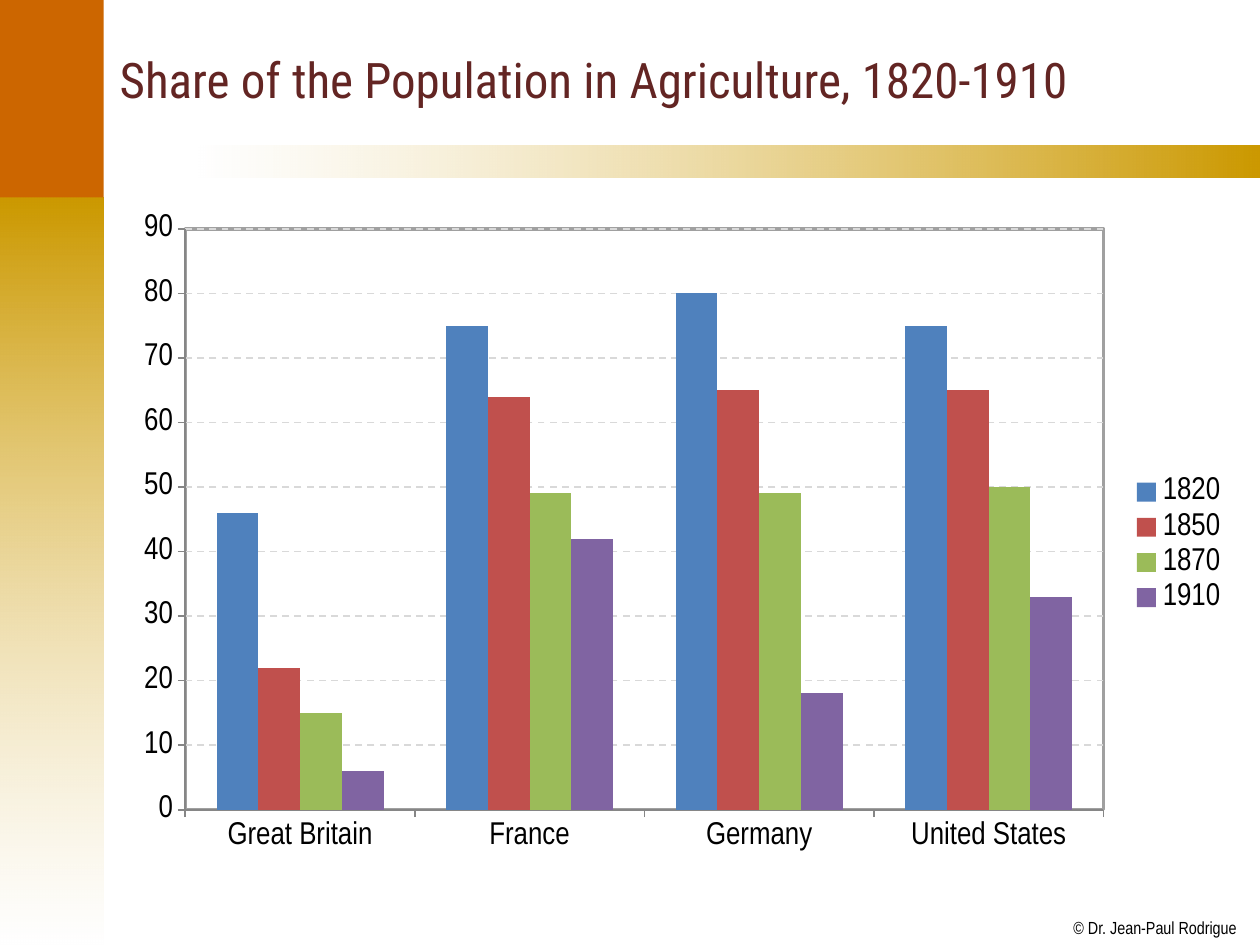
from dataclasses import dataclass

from lxml.etree import SubElement
from pptx import Presentation
from pptx.chart.data import CategoryChartData
from pptx.dml.color import RGBColor
from pptx.enum.chart import XL_CHART_TYPE as ChartType
from pptx.enum.chart import XL_LEGEND_POSITION as LegendPos
from pptx.enum.chart import XL_TICK_MARK as Tick
from pptx.enum.dml import MSO_LINE as Dash
from pptx.enum.shapes import MSO_SHAPE as Preset
from pptx.enum.text import MSO_ANCHOR as Anchor
from pptx.enum.text import PP_ALIGN as Align
from pptx.oxml import parse_xml
from pptx.oxml.ns import nsdecls, qn
from pptx.util import Cm, Pt


@dataclass(frozen=True)
class Theme:
    title_font: str = "Roboto Condensed"
    body_font: str = "Arial Narrow"
    title_size: int = 28
    chart_size: int = 18
    credit_size: int = 10
    title: str = "632523"
    text: str = "000000"
    orange: str = "CC6600"
    gold: str = "CC9900"
    white: str = "FFFFFF"
    grid: str = "D9D9D9"
    axis: str = "868686"
    frame: str = "A0A0A0"
    series: tuple = ("4F81BD", "C0504D", "9BBB59", "8064A2")


THEME = Theme()
rgb = RGBColor.from_string

COUNTRIES = ("Great Britain", "France", "Germany", "United States")
SHARES = {
    "1820": (46, 75, 80, 75),
    "1850": (22, 64, 65, 65),
    "1870": (15, 49, 49, 50),
    "1910": (6, 42, 18, 33),
}


def set_font(font, name, size, color):
    font.name, font.size, font.bold = name, Pt(size), False
    font.color.rgb = rgb(color)


def add_block(slide, box):
    block = slide.shapes.add_shape(Preset.RECTANGLE, *map(Cm, box))
    block.shadow.inherit = False
    block.line.fill.background()
    return block


def add_fade(slide, box, stops, angle):
    """Rectangle with a gradient of (colour, opacity in percent) stops."""
    block = add_block(slide, box)
    block.fill.gradient()
    block.fill.gradient_angle = angle
    for position, stop, (color, _) in zip((0, 1), block.fill.gradient_stops, stops):
        stop.position = position
        stop.color.rgb = rgb(color)
    colors = block._element.spPr.iter(qn("a:srgbClr"))
    for element, (_, opacity) in zip(colors, stops):
        if opacity < 100:
            SubElement(element, qn("a:alpha"), val=str(opacity * 1000))


def add_decoration(slide, box):
    """Side column with an orange head, and a gold band under the title."""
    left, top, width, height = box
    column, head, band_left, band_top, band_height = 2.11, 4.0, 4.0, 2.93, 0.66
    add_fade(slide, (left, top + head, column, height - head),
             ((THEME.gold, 100), (THEME.white, 51)), 270)
    add_fade(slide, (band_left, band_top, left + width - band_left, band_height),
             ((THEME.white, 50), (THEME.gold, 100)), 0)
    corner = add_block(slide, (left, top, column, head))
    corner.fill.solid()
    corner.fill.fore_color.rgb = rgb(THEME.orange)


def add_credit(slide, box):
    credit = slide.shapes.add_textbox(*map(Cm, box))
    frame = credit.text_frame
    frame.margin_left = frame.margin_right = frame.margin_top = frame.margin_bottom = 0
    frame.word_wrap = False
    line = frame.paragraphs[0]
    line.text = "© Dr. Jean-Paul Rodrigue"
    set_font(line.font, THEME.body_font, THEME.credit_size, THEME.text)


def place_title(slide, box):
    title = slide.shapes.title
    title.left, title.top, title.width, title.height = map(Cm, box)
    slide.shapes._spTree.append(title._element)  # in front of the decoration
    frame = title.text_frame
    frame.vertical_anchor = Anchor.MIDDLE
    line = frame.paragraphs[0]
    line.text = "Share of the Population in Agriculture, 1820-1910"
    line.alignment = Align.LEFT
    set_font(line.font, THEME.title_font, THEME.title_size, THEME.title)


def frame_plot(chart, x, y, w, h):
    """Fix the inner plot area, as fractions of the chart, and outline it."""
    plot_area = chart._chartSpace.chart.plotArea
    for layout in plot_area.findall(qn("c:layout")):
        plot_area.remove(layout)
    sizes = "".join(f'<c:{tag} val="{value}"/>' for tag, value in zip("xywh", (x, y, w, h)))
    plot_area.insert(0, parse_xml(
        f'<c:layout {nsdecls("c")}><c:manualLayout><c:layoutTarget val="inner"/>'
        f'<c:xMode val="edge"/><c:yMode val="edge"/>{sizes}'
        '</c:manualLayout></c:layout>'))
    plot_area.append(parse_xml(
        f'<c:spPr {nsdecls("c", "a")}><a:noFill/><a:ln w="25400"><a:solidFill>'
        f'<a:srgbClr val="{THEME.frame}"/></a:solidFill></a:ln></c:spPr>'))


def add_share_chart(slide, box):
    data = CategoryChartData()
    data.categories = COUNTRIES
    for year, shares in SHARES.items():
        data.add_series(year, shares)
    chart = slide.shapes.add_chart(
        ChartType.COLUMN_CLUSTERED, *map(Cm, box), data).chart
    set_font(chart.font, THEME.body_font, THEME.chart_size, THEME.text)
    chart.has_title = False

    # Columns
    columns = chart.plots[0]
    columns.gap_width, columns.overlap = 150, 0
    columns.vary_by_categories = False
    for year, color in zip(columns.series, THEME.series):
        year.format.fill.solid()
        year.format.fill.fore_color.rgb = rgb(color)

    # Axes and grid
    countries, percent = chart.category_axis, chart.value_axis
    for axis in (countries, percent):
        axis.major_tick_mark, axis.minor_tick_mark = Tick.OUTSIDE, Tick.NONE
        axis.format.line.color.rgb = rgb(THEME.axis)
        axis.format.line.width = Pt(1)
    percent.minimum_scale, percent.maximum_scale, percent.major_unit = 0, 90, 10
    percent.has_major_gridlines = True
    grid = percent.major_gridlines.format.line
    grid.color.rgb, grid.width, grid.dash_style = rgb(THEME.grid), Pt(1), Dash.DASH

    # Legend and plot frame
    chart.has_legend = True
    chart.legend.position = LegendPos.RIGHT
    chart.legend.include_in_layout = False
    frame_plot(chart, 0.071, 0.067, 0.808, 0.796)


def main():
    deck = Presentation()
    deck.slide_width, deck.slide_height = Cm(25.4), Cm(19.05)
    slide = deck.slides.add_slide(deck.slide_layouts[5])  # Title Only
    add_decoration(slide, (-0.02, -0.02, 25.42, 19.07))
    add_credit(slide, (21.64, 18.49, 3.3, 0.43))
    place_title(slide, (2.16, 0.28, 22.81, 2.64))
    add_share_chart(slide, (2.11, 3.63, 22.91, 14.71))
    deck.save("out.pptx")


if __name__ == "__main__":
    main()
